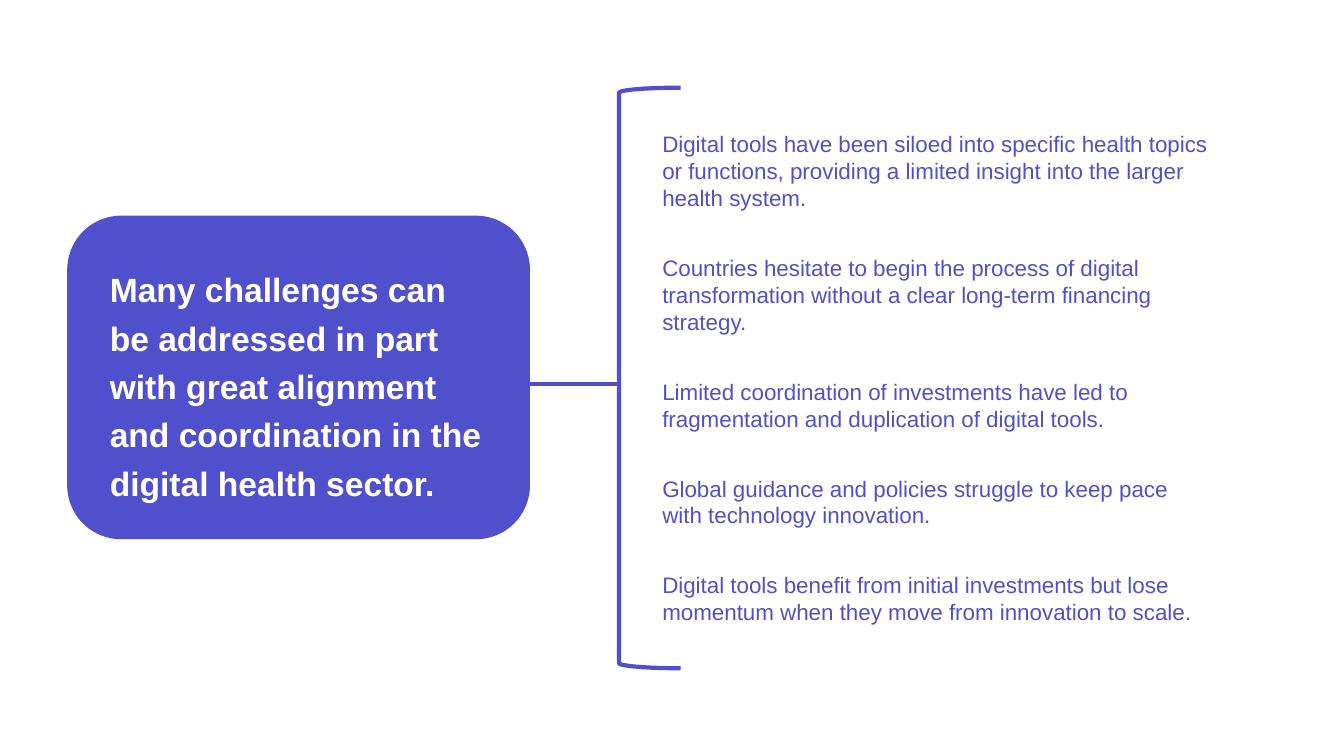
import pptx
import pptx.util
import pptx.dml.color
import pptx.enum.shapes
import pptx.enum.text
import lxml.etree

INDIGO = pptx.dml.color.RGBColor(0x50, 0x50, 0xCD)
WHITE = pptx.dml.color.RGBColor(0xFF, 0xFF, 0xFF)

presentation = pptx.Presentation()
presentation.slide_width = pptx.util.Inches(13.33)
presentation.slide_height = pptx.util.Inches(7.5)
slide = presentation.slides.add_slide(presentation.slide_layouts[6])


def place(left, top, width, height):
    column = presentation.slide_width / 100
    row = presentation.slide_height / 100
    return [round(length) for length in (left * column, top * row, width * column, height * row)]


def add_text(area, text, size, color, bold=False, line_spacing=1.0):
    text_box = slide.shapes.add_textbox(*place(*area))
    text_box.text_frame.word_wrap = True
    text_box.text_frame.vertical_anchor = pptx.enum.text.MSO_ANCHOR.TOP
    paragraph = text_box.text_frame.paragraphs[0]
    paragraph.line_spacing = line_spacing
    run = paragraph.add_run()
    run.text = text
    run.font.name = "Arial"
    run.font.size = pptx.util.Pt(size)
    run.font.bold = bold
    run.font.color.rgb = color
    return text_box


challenges = [
    ("Digital tools have been siloed into specific health topics or functions, providing a limited insight into the larger health system.", 3),
    ("Countries hesitate to begin the process of digital transformation without a clear long-term financing strategy.", 3),
    ("Limited coordination of investments have led to fragmentation and duplication of digital tools.", 2),
    ("Global guidance and policies struggle to keep pace with technology innovation.", 2),
    ("Digital tools benefit from initial investments but lose momentum when they move from innovation to scale.", 2),
]
line_height = 3.6
padding = 1.33
gap = 4.27
top = 16.53
for challenge, lines in challenges:
    height = lines * line_height + padding
    text_box = add_text((48.54, top, 42.39, height), challenge, 16, INDIGO)
    text_box.text_frame.auto_size = pptx.enum.text.MSO_AUTO_SIZE.SHAPE_TO_FIT_TEXT
    top += height + gap

card = slide.shapes.add_shape(
    pptx.enum.shapes.MSO_SHAPE.ROUNDED_RECTANGLE, *place(5, 28.53, 34.43, 42.8))
card.shadow.inherit = False
card.fill.solid()
card.fill.fore_color.rgb = INDIGO
card.line.fill.background()

add_text(
    (7.43, 33.87, 29.63, 32.4),
    "Many challenges can be addressed in part with great alignment and coordination in the digital health sector.",
    24, WHITE, bold=True, line_spacing=1.2)

bracket = slide.shapes.add_shape(
    pptx.enum.shapes.MSO_SHAPE.LEFT_BRACKET, *place(46.06, 11.6, 4.58, 76.8))
bracket.shadow.inherit = False
bracket.fill.background()

link_left, link_top, link_width, _ = place(39.43, 50.8, 6.6, 0)
link = slide.shapes.add_connector(
    pptx.enum.shapes.MSO_CONNECTOR.STRAIGHT,
    link_left, link_top, link_left + link_width, link_top)
lxml.etree.SubElement(link._element.spPr, pptx.oxml.ns.qn("a:effectLst"))

for shape in (bracket, link):
    shape.line.color.rgb = INDIGO
    shape.line.width = pptx.util.Pt(3)
    line_properties = shape.line._get_or_add_ln()

presentation.save("out.pptx")
